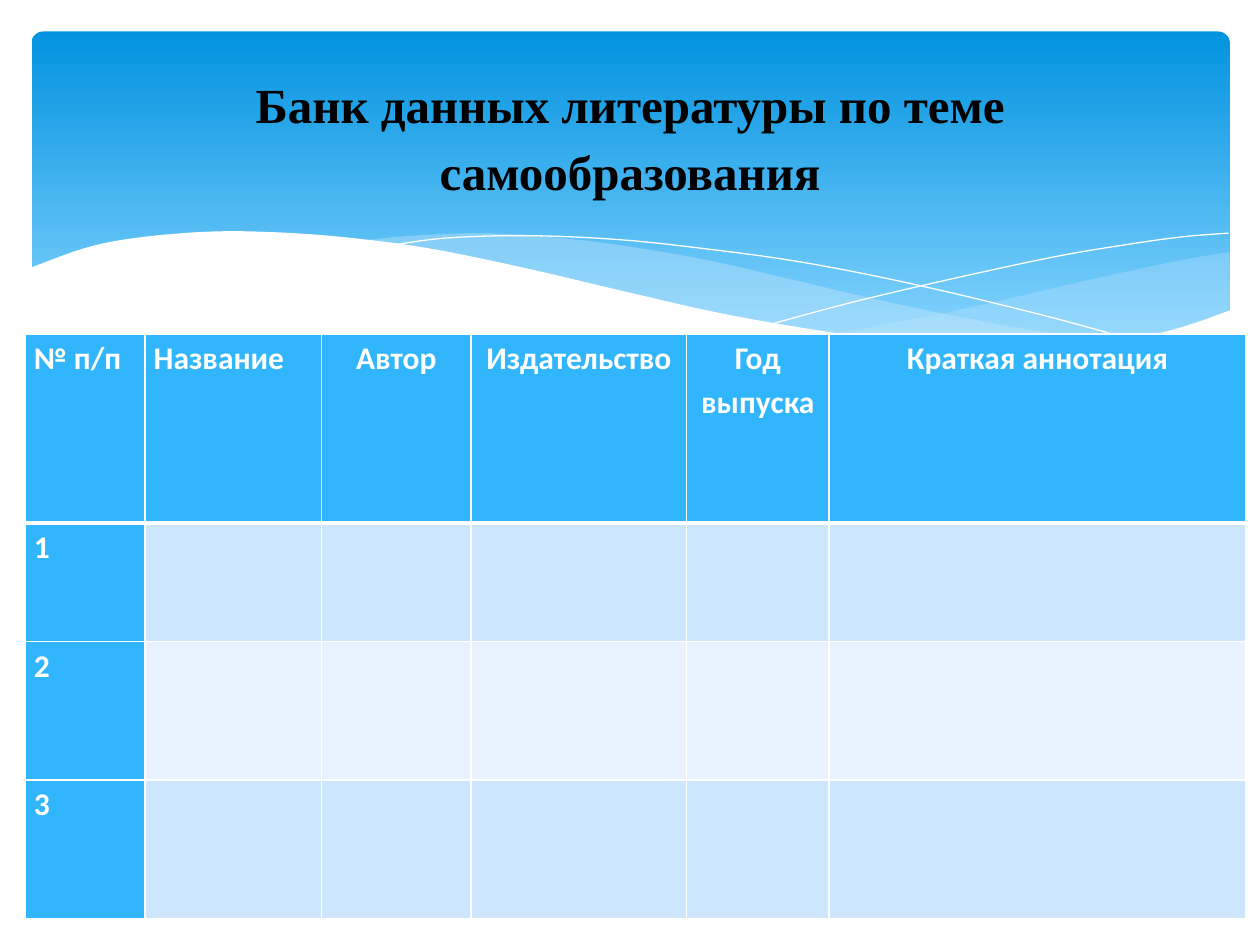
from dataclasses import dataclass
from typing import Optional

import pptx
import pptx.dml.color
import pptx.enum.shapes
import pptx.enum.text
import pptx.oxml
import pptx.oxml.ns
import pptx.util
from pptx.util import Inches

Point = tuple[float, float]
ALIGN = pptx.enum.text.PP_ALIGN
ANCHOR = pptx.enum.text.MSO_ANCHOR

WHITE, BLACK = "FFFFFF", "000000"
ACCENT, MIST = "31B6FD", "C6E7FC"
BANDS = ("CEE5FE", "E8F3FF")


@dataclass
class Wave:
    """An outline made of smooth edges that meet at corners."""
    edges: list[list[Point]]
    fill: Optional[str] = None
    opacity: int = 100


@dataclass
class Column:
    heading: str
    width: float
    align: ALIGN = ALIGN.CENTER


WAVES = [
    Wave([[(9.76, 2), (9.35, 2.07), (8.61, 2.23), (7.79, 2.42), (7.06, 2.57), (6.61, 2.65)],
          [(6.61, 2.65), (7.19, 2.72), (7.69, 2.77), (8.14, 2.78), (8.63, 2.75),
           (9.05, 2.69), (9.42, 2.59), (9.76, 2.47)]], MIST, 29),
    Wave([[(8.93, 2.73), (8.37, 2.65), (7.75, 2.54), (7.06, 2.4), (6.29, 2.22), (5.69, 2.08),
           (5.14, 1.98), (4.65, 1.91), (4.2, 1.87), (3.8, 1.85), (3.28, 1.87), (2.86, 1.91)],
          [(2.86, 1.91), (3.42, 1.99), (4.04, 2.11), (4.91, 2.32), (5.66, 2.48), (6.34, 2.61),
           (6.95, 2.7), (7.48, 2.76), (8.07, 2.78), (8.57, 2.77), (8.93, 2.73)]], MIST, 40),
    Wave([[(3.09, 1.95), (3.53, 1.89), (4.16, 1.87), (4.89, 1.9), (5.56, 1.97), (6.36, 2.08),
           (7.27, 2.26), (8.31, 2.51), (9.07, 2.72)]]),
    Wave([[(6.13, 2.57), (6.72, 2.41), (7.48, 2.23), (8.36, 2.04), (8.95, 1.94),
           (9.38, 1.88), (9.75, 1.85)]]),
    Wave([[(9.77, 2.46), (9.4, 2.59), (8.99, 2.69), (8.5, 2.75), (8.09, 2.77), (7.44, 2.74),
           (6.68, 2.65), (5.79, 2.5), (5.03, 2.33), (4.18, 2.13), (3.4, 1.97), (2.71, 1.88),
           (2.11, 1.84), (1.61, 1.84), (1.06, 1.89), (0.67, 1.97), (0.23, 2.13)],
          [(0.23, 3.29), (9.77, 3.29)]], WHITE),
]

COLUMNS = [
    Column("№\u00a0п/п", 0.95, ALIGN.LEFT),
    Column("Название", 1.4, ALIGN.LEFT),
    Column("Автор", 1.19),
    Column("Издательство", 1.71),
    Column("Год\nвыпуска", 1.13),
    Column("Краткая аннотация", 3.31),
]
ROW_HEIGHTS = [1.5, 0.94, 1.1, 1.1]


def colour(value: str) -> pptx.dml.color.RGBColor:
    return pptx.dml.color.RGBColor.from_string(value)


def write(frame, text: str, *, size: float = 18, font: str = "Calibri",
          color: str = WHITE, align: ALIGN = ALIGN.LEFT) -> None:
    frame.text = text
    for paragraph in frame.paragraphs:
        paragraph.alignment = align
        paragraph.line_spacing = 1.15
        style = paragraph.runs[0].font
        style.name, style.size, style.bold = font, pptx.util.Pt(size), True
        style.color.rgb = colour(color)


def smooth(anchors: list[Point], steps: int = 5) -> list[Point]:
    """Catmull-Rom curve through the anchors."""
    padded = [anchors[0], *anchors, anchors[-1]]
    curve = [anchors[0]]
    for a, b, c, d in zip(padded, padded[1:], padded[2:], padded[3:]):
        for step in range(1, steps + 1):
            t = step / steps
            curve.append(tuple(
                0.5 * (2 * q + (r - p) * t + (2 * p - 5 * q + 4 * r - s) * t ** 2
                       + (3 * q - p - 3 * r + s) * t ** 3)
                for p, q, r, s in zip(a, b, c, d)))
    return curve


def draw_wave(slide, wave: Wave) -> None:
    points = [(Inches(x), Inches(y)) for edge in wave.edges for x, y in smooth(edge)]
    builder = slide.shapes.build_freeform(*points[0])
    builder.add_line_segments(points[1:], close=wave.fill is not None)
    shape = builder.convert_to_shape()
    shape.shadow.inherit = False
    if wave.fill is None:
        shape.fill.background()
        shape.line.color.rgb = colour(WHITE)
        shape.line.width = pptx.util.Pt(0)
        return
    shape.line.fill.background()
    shape.fill.solid()
    shape.fill.fore_color.rgb = colour(wave.fill)
    if wave.opacity < 100:
        tint = shape.fill._xPr.find(".//" + pptx.oxml.ns.qn("a:srgbClr"))
        tint.append(pptx.oxml.parse_xml(
            f'<a:alpha {pptx.oxml.ns.nsdecls("a")} val="{wave.opacity * 1000}"/>'))


def draw_banner(slide) -> None:
    banner = slide.shapes.add_shape(
        pptx.enum.shapes.MSO_SHAPE.ROUNDED_RECTANGLE,
        Inches(0.25), Inches(0.25), Inches(9.51), Inches(2.7))
    banner.adjustments[0] = 0.034
    banner.shadow.inherit = False
    banner.line.fill.background()
    banner.fill.gradient()
    banner.fill.gradient_angle = 270
    for stop, position, shade in zip(banner.fill.gradient_stops, (0, 0.9), ("0293E0", "83D3FE")):
        stop.position = position
        stop.color.rgb = colour(shade)


def style_cell(cell, fill: str, top: float, bottom: float) -> None:
    properties = cell._tc.get_or_add_tcPr()
    for side, width in (("L", 1), ("R", 1), ("T", top), ("B", bottom)):
        properties.append(pptx.oxml.parse_xml(
            f'<a:ln{side} {pptx.oxml.ns.nsdecls("a")} w="{pptx.util.Pt(width)}">'
            f'<a:solidFill><a:srgbClr val="{WHITE}"/></a:solidFill></a:ln{side}>'))
    cell.fill.solid()
    cell.fill.fore_color.rgb = colour(fill)
    cell.margin_left = cell.margin_right = Inches(0.07)
    cell.margin_top = cell.margin_bottom = 0


def draw_literature(slide) -> None:
    table = slide.shapes.add_table(
        len(ROW_HEIGHTS), len(COLUMNS), Inches(0.2), Inches(2.65),
        Inches(sum(column.width for column in COLUMNS)), Inches(sum(ROW_HEIGHTS))).table
    table.first_row = table.horz_banding = False
    for number, height in enumerate(ROW_HEIGHTS):
        table.rows[number].height = Inches(height)
        for index, column in enumerate(COLUMNS):
            table.columns[index].width = Inches(column.width)
            cell = table.cell(number, index)
            is_label = number == 0 or index == 0
            style_cell(cell, ACCENT if is_label else BANDS[(number - 1) % 2],
                       top=3 if number == 1 else 1, bottom=3 if number == 0 else 1)
            if is_label:
                write(cell.text_frame, str(number) if number else column.heading,
                      align=column.align)


def draw_title(slide) -> None:
    frame = slide.shapes.add_textbox(
        Inches(0.5), Inches(0.37), Inches(9), Inches(1.37)).text_frame
    frame.word_wrap = True
    frame.vertical_anchor = ANCHOR.MIDDLE
    write(frame, "Банк данных литературы по теме самообразования",
          size=28, font="Times New Roman", color=BLACK, align=ALIGN.CENTER)


def main() -> None:
    deck = pptx.Presentation()
    deck.slide_width, deck.slide_height = Inches(10), Inches(7.5)
    slide = deck.slides.add_slide(deck.slide_layouts[6])

    # Banner with waves along its lower edge
    draw_banner(slide)
    for wave in WAVES:
        draw_wave(slide, wave)

    # Literature table and title
    draw_literature(slide)
    draw_title(slide)

    deck.save("out.pptx")


if __name__ == "__main__":
    main()
